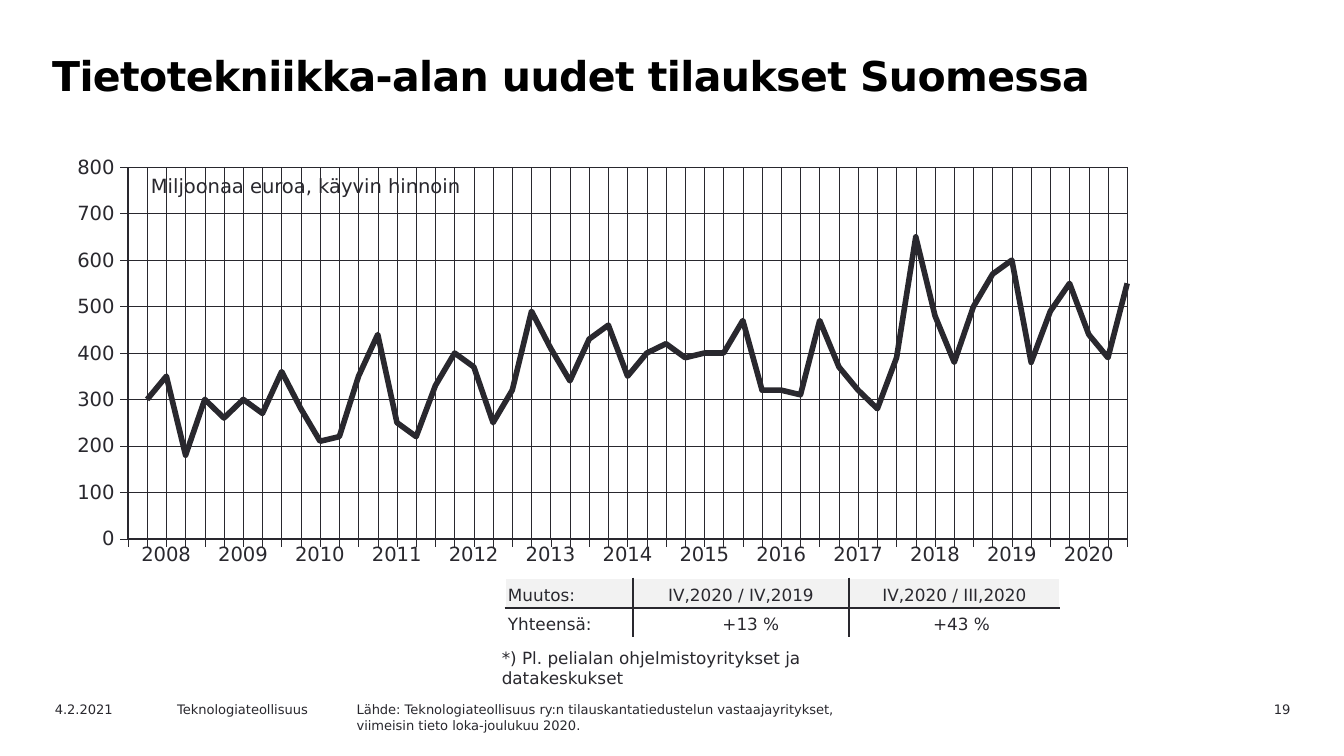
from lxml.etree import SubElement, fromstring
from pptx import Presentation
from pptx.chart.data import CategoryChartData
from pptx.dml.color import RGBColor
from pptx.enum.chart import XL_CHART_TYPE, XL_TICK_LABEL_POSITION, XL_TICK_MARK
from pptx.enum.dml import MSO_LINE
from pptx.enum.text import MSO_ANCHOR, PP_ALIGN
from pptx.oxml.ns import nsdecls, qn
from pptx.util import Inches, Pt

WIDE = Inches(10)
HIGH = WIDE * 9 // 16
HUES = {"ink": "29282E", "black": "000000", "white": "FFFFFF", "band": "F2F2F2"}
FACE = "DejaVu Sans"
PLAIN = "{2D5ABB26-0587-4C30-8999-92F81FD0307C}"  # table style without grid
LEFT, MID, RIGHT = PP_ALIGN.LEFT, PP_ALIGN.CENTER, PP_ALIGN.RIGHT

# Boxes are left, top, width, height in percent of the slide
BOXES = {
    "title": (2.9, 5.4, 87.4, 12.6),
    "chart": (3.1, 19.75, 91.8, 59.25),
    "unit": (10.25, 22.15, 26, 4.8),
    "change": (37.6, 76.5, 41.25, 7.83),
    "note": (36.35, 84.75, 29.9, 7.12),
    "years": (9.5, 71, 74.4, 5.52),
}
FOOT = [
    (87.6, 9.4, RIGHT, ["19"]),
    (3.1, 10, LEFT, ["4.2.2021"]),
    (12.2, 14.2, LEFT, ["Teknologiateollisuus"]),
    (25.55, 50.7, LEFT, [
        "Lähde: Teknologiateollisuus ry:n tilauskantatiedustelun vastaajayritykset,",
        "viimeisin tieto loka-joulukuu 2020."]),
]
ORDERS = [
    None, 300, 350, 180, 300, 260, 300, 270, 360, 280, 210, 220, 350, 440,
    250, 220, 330, 400, 370, 250, 320, 490, 410, 340, 430, 460, 350, 400,
    420, 390, 400, 400, 470, 320, 320, 310, 470, 370, 320, 280, 390, 650,
    480, 380, 500, 570, 600, 380, 490, 550, 440, 390, 550]
CHANGE = [["Muutos:", "IV,2020 / IV,2019", "IV,2020 / III,2020"],
          ["Yhteensä:", "+13 %", "+43 %"]]


def place(box):
    x, y, w, h = box
    return [round(part * side / 100)
            for part, side in ((x, WIDE), (y, HIGH), (w, WIDE), (h, HIGH))]


def apply(item, form):
    for name, value in form.items():
        setattr(item, name, value)


def hue(name):
    return RGBColor.from_string(HUES[name])


def style(font, size, color="ink", bold=False):
    apply(font, {"name": FACE, "size": Pt(size), "bold": bold})
    font.color.rgb = hue(color)


def write(frame, lines, size, align=LEFT, **look):
    for i, line in enumerate(lines):
        para = frame.paragraphs[0] if i == 0 else frame.add_paragraph()
        para.alignment = align
        run = para.add_run()
        run.text = line
        style(run.font, size, **look)


def add_text(slide, box, lines, size, align=LEFT, wrap=True, **look):
    frame = slide.shapes.add_textbox(*place(box)).text_frame
    frame.word_wrap = wrap
    write(frame, lines, size, align, **look)
    return frame


def add_title(slide, box):
    frame = add_text(slide, box, ["Tietotekniikka-alan uudet tilaukset Suomessa"],
                     22, color="black", bold=True)
    frame.margin_top = Inches(0.06)
    para = frame.paragraphs[0]
    para.line_spacing = Pt(27)
    para.runs[0].font._element.set("spc", "-30")


def draw_line(line, width, dash=None):
    line.color.rgb = hue("ink")
    line.width = Pt(width)
    if dash:
        line.dash_style = dash


def frame_plot(chart, x, y, w, h):
    """Fix the inner plot area in shares of the chart and outline it."""
    plot = chart._chartSpace.find(".//" + qn("c:plotArea"))
    for old in plot.findall(qn("c:layout")):
        plot.remove(old)
    layout = fromstring(f"<c:layout {nsdecls('c')}><c:manualLayout/></c:layout>")
    for tag, val in (("layoutTarget", "inner"), ("xMode", "edge"), ("yMode", "edge"),
                     ("x", x), ("y", y), ("w", w), ("h", h)):
        SubElement(layout[0], qn("c:" + tag)).set("val", str(val))
    plot.insert(0, layout)
    plot.append(fromstring(
        f'<c:spPr {nsdecls("c", "a")}><a:noFill/><a:ln w="9525"><a:solidFill>'
        f'<a:srgbClr val="{HUES["ink"]}"/></a:solidFill></a:ln></c:spPr>'))
    axis = plot.find(qn("c:valAx"))
    cross = axis.find(qn("c:crossBetween"))
    if cross is None:
        cross = axis.makeelement(qn("c:crossBetween"), {})
        axis.find(qn("c:crosses")).addnext(cross)
    cross.set("val", "midCat")


def add_graph(slide, box):
    data = CategoryChartData()
    data.categories = [str(n + 1) for n in range(len(ORDERS))]
    data.add_series("Series 1", ORDERS)
    chart = slide.shapes.add_chart(XL_CHART_TYPE.LINE, *place(box), data).chart
    apply(chart, {"has_legend": False, "has_title": False})
    style(chart.font, 10.5)
    frame_plot(chart, 0.07, 0.04, 0.81, 0.83)
    for axis in (chart.category_axis, chart.value_axis):
        apply(axis, {"has_major_gridlines": True,
                     "major_tick_mark": XL_TICK_MARK.OUTSIDE,
                     "minor_tick_mark": XL_TICK_MARK.NONE})
        draw_line(axis.format.line, 0.22)
        draw_line(axis.major_gridlines.format.line, 0.25, MSO_LINE.ROUND_DOT)
        style(axis.tick_labels.font, 10.5)
    chart.category_axis.tick_label_position = XL_TICK_LABEL_POSITION.NONE
    apply(chart.value_axis, {"minimum_scale": 0, "maximum_scale": 800, "major_unit": 100})
    apply(chart.value_axis.tick_labels,
          {"number_format": "#,##0", "number_format_is_linked": False})
    chart.plots[0].vary_by_categories = False
    line = chart.plots[0].series[0]
    line.smooth = False
    draw_line(line.format.line, 3)


def add_grid(slide, box, rows, cols):
    table = slide.shapes.add_table(rows, cols, *place(box)).table
    apply(table, {"first_row": False, "horz_banding": False})
    table._tbl.tblPr.find(qn("a:tableStyleId")).text = PLAIN
    return table


def add_edges(cell, colors):
    """Draw left, right, top and bottom borders in that order."""
    for i, (side, color) in enumerate(zip("LRTB", colors)):
        cell._tc.get_or_add_tcPr().insert(i, fromstring(
            f'<a:ln{side} {nsdecls("a")} w="12700"><a:solidFill>'
            f'<a:srgbClr val="{HUES[color]}"/></a:solidFill></a:ln{side}>'))


def add_change(slide, box):
    table = add_grid(slide, box, 2, 3)
    for col, share in zip(table.columns, (0.23, 0.39, 0.38)):
        col.width = round(place(box)[2] * share)
    for r, row in enumerate(CHANGE):
        for c, text in enumerate(row):
            cell = table.cell(r, c)
            pad = Inches(0.02)
            far = Inches(0.52) if r and c else pad
            apply(cell, {"margin_left": pad, "margin_right": far, "margin_top": pad,
                         "margin_bottom": pad, "vertical_anchor": MSO_ANCHOR.BOTTOM})
            write(cell.text_frame, [text], 9, LEFT if c == 0 else RIGHT if r else MID)
            cell.fill.solid()
            cell.fill.fore_color.rgb = hue("white" if r else "band")
            inner = (c > 0, c < 2, r > 0, r < 1)
            add_edges(cell, ["ink" if flag else "white" for flag in inner])


def add_years(slide, box):
    years = range(2008, 2021)
    table = add_grid(slide, box, 1, len(years))
    for cell, year in zip(table.rows[0].cells, years):
        apply(cell, {"margin_left": Inches(0.05), "margin_right": Inches(0.05)})
        cell.fill.background()
        write(cell.text_frame, [str(year)], 10.5, MID)


def add_foot(slide):
    for x, w, align, lines in FOOT:
        add_text(slide, (x, 91.9, w, 3.2), lines, 7, align)


def main():
    deck = Presentation()
    apply(deck, {"slide_width": WIDE, "slide_height": HIGH})
    slide = deck.slides.add_slide(deck.slide_layouts[6])
    add_title(slide, BOXES["title"])
    add_foot(slide)
    add_graph(slide, BOXES["chart"])
    add_text(slide, BOXES["unit"], ["Miljoonaa euroa, käyvin hinnoin"], 10.5, wrap=False)
    add_change(slide, BOXES["change"])
    add_text(slide, BOXES["note"],
             ["*) Pl. pelialan ohjelmistoyritykset ja datakeskukset"], 9)
    add_years(slide, BOXES["years"])
    deck.save("out.pptx")


if __name__ == "__main__":
    main()
